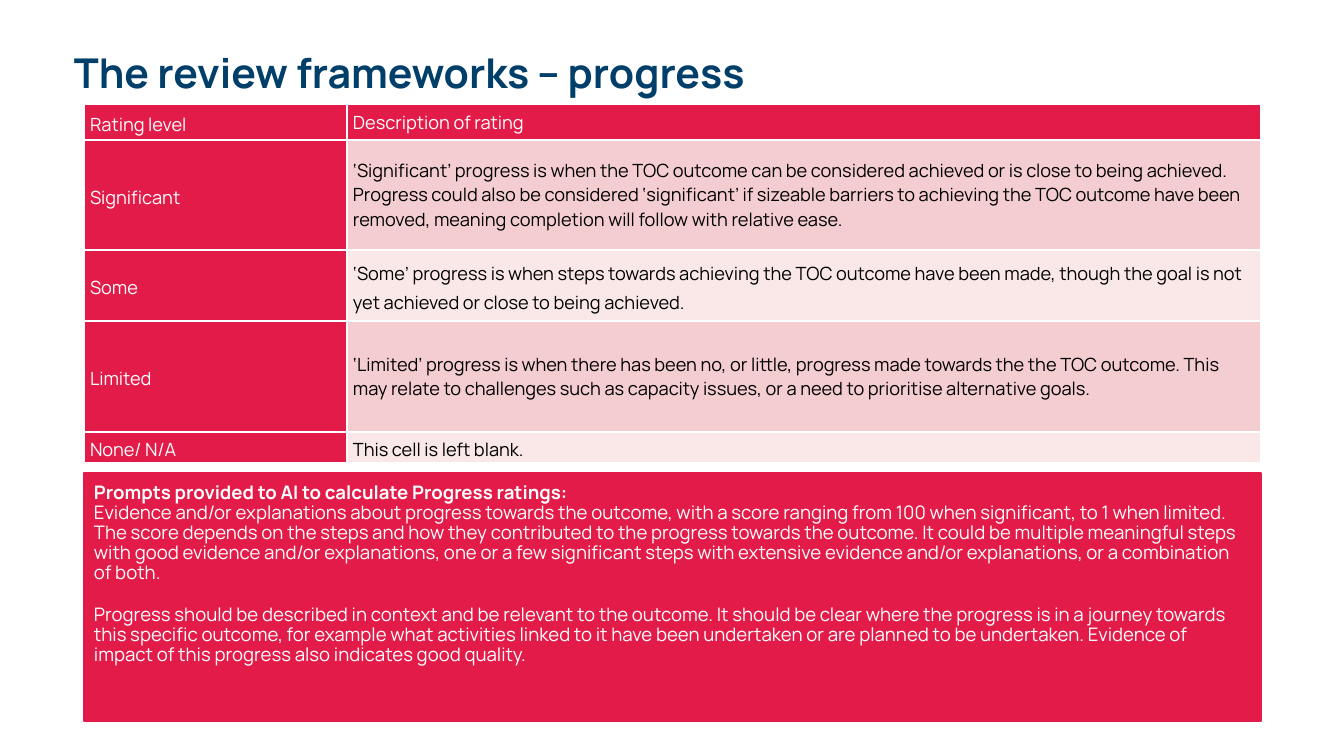
from lxml.etree import SubElement
from pptx import Presentation
from pptx.dml.color import RGBColor
from pptx.enum.shapes import MSO_SHAPE
from pptx.enum.text import MSO_ANCHOR, PP_ALIGN
from pptx.oxml.ns import qn
from pptx.util import Emu, Pt

NAVY = RGBColor(0x00, 0x3F, 0x69)
RED = RGBColor(0xE3, 0x1B, 0x49)
PINK = RGBColor(0xF4, 0xCD, 0xD0)
PALE_PINK = RGBColor(0xFA, 0xE8, 0xE9)
WHITE = RGBColor(0xFF, 0xFF, 0xFF)
BLACK = RGBColor(0x00, 0x00, 0x00)
EMU_PER_PX = 914400 / 100.8


def px(length):
    return Emu(round(length * EMU_PER_PX))


def write(paragraph, text, size, color, bold=False, **paragraph_format):
    run = paragraph.add_run()
    run.text = text
    run.font.color.rgb = color
    for name, value in {"name": "Manrope", "size": Pt(size), "bold": bold}.items():
        setattr(run.font, name, value)
    for name, value in {"alignment": PP_ALIGN.LEFT, **paragraph_format}.items():
        setattr(paragraph, name, value)


presentation = Presentation()
presentation.slide_width, presentation.slide_height = px(1344), px(756)
slide = presentation.slides.add_slide(presentation.slide_layouts[6])

# Title
title = slide.shapes.add_textbox(px(64), px(47), px(1177), px(56))
title_format = {"word_wrap": True, "vertical_anchor": MSO_ANCHOR.MIDDLE,
                "margin_top": 0, "margin_bottom": 0}
for name, value in title_format.items():
    setattr(title.text_frame, name, value)
write(title.text_frame.paragraphs[0], "The review frameworks – progress", 29.3, NAVY,
      bold=True, line_spacing=0.9)

# Ratings table: row height, level, description, description line spacing
ratings = [
    (36, "Rating level", "Description of rating", 1.0),
    (110, "Significant",
     "‘Significant’ progress is when the TOC outcome can be considered achieved or is "
     "close to being achieved. Progress could also be considered ‘significant’ if sizeable "
     "barriers to achieving the TOC outcome have been removed, meaning completion will "
     "follow with relative ease.", 1.0),
    (71, "Some",
     "‘Some’ progress is when steps towards achieving the TOC outcome have been made, "
     "though the goal is not yet achieved or close to being achieved.", 1.2),
    (111, "Limited",
     "‘Limited’ progress is when there has been no, or little, progress made towards the "
     "the TOC outcome. This may relate to challenges such as capacity issues, or a need to "
     "prioritise alternative goals.", 1.0),
    (31, "None/ N/A", "This cell is left blank.", 1.2),
]
table_height = sum(rating[0] for rating in ratings)
table = slide.shapes.add_table(len(ratings), 2, px(84), px(104), px(1177),
                               px(table_height)).table
for column, width in zip(table.columns, (263, 914)):
    column.width = px(width)

cell_format = {"vertical_anchor": MSO_ANCHOR.MIDDLE, "margin_left": px(6),
               "margin_right": px(6), "margin_top": 0, "margin_bottom": 0}
for row, (height, level, description, spacing) in enumerate(ratings):
    table.rows[row].height = px(height)
    for column, (text, line_spacing) in enumerate([(level, 1.2), (description, spacing)]):
        cell = table.cell(row, column)
        for name, value in cell_format.items():
            setattr(cell, name, value)
        is_heading = row == 0 or column == 0
        write(cell.text_frame.paragraphs[0], text, 13, WHITE if is_heading else BLACK,
              line_spacing=line_spacing)

        # White cell borders, which come before the fill in the XML
        properties = cell._tc.get_or_add_tcPr()
        for side in ("lnL", "lnR", "lnT", "lnB"):
            border = SubElement(properties, qn(f"a:{side}"), w=str(Pt(1)))
            border_fill = SubElement(border, qn("a:solidFill"))
            SubElement(border_fill, qn("a:srgbClr"), val=str(WHITE))
        cell.fill.solid()
        body_color = PINK if row % 2 else PALE_PINK
        cell.fill.fore_color.rgb = RED if is_heading else body_color

# Prompts panel: text, bold, space before
panel = slide.shapes.add_shape(MSO_SHAPE.RECTANGLE, px(84), px(473), px(1177), px(248))
panel.shadow.inherit = False
panel.fill.solid()
panel.fill.fore_color.rgb = RED
panel.line.color.rgb = RED
panel.line.width = Pt(1)
panel_format = {"word_wrap": True, "vertical_anchor": MSO_ANCHOR.TOP, "margin_top": px(11)}
for name, value in panel_format.items():
    setattr(panel.text_frame, name, value)

prompts = [
    ("Prompts provided to AI to calculate Progress ratings:", True, 0),
    ("Evidence and/or explanations about progress towards the outcome, with a score ranging "
     "from 100 when significant, to 1 when limited. The score depends on the steps and how "
     "they contributed to the progress towards the outcome. It could be multiple meaningful "
     "steps with good evidence and/or explanations, one or a few significant steps with "
     "extensive evidence and/or explanations, or a combination of both.", False, 0),
    ("Progress should be described in context and be relevant to the outcome. It should be "
     "clear where the progress is in a journey towards this specific outcome, for example "
     "what activities linked to it have been undertaken or are planned to be undertaken. "
     "Evidence of impact of this progress also indicates good quality.", False, 16),
]
for index, (text, bold, space_before) in enumerate(prompts):
    frame = panel.text_frame
    paragraph = frame.add_paragraph() if index else frame.paragraphs[0]
    write(paragraph, text, 13.3, WHITE, bold=bold, line_spacing=0.89,
          space_before=Pt(space_before))

presentation.save("out.pptx")
